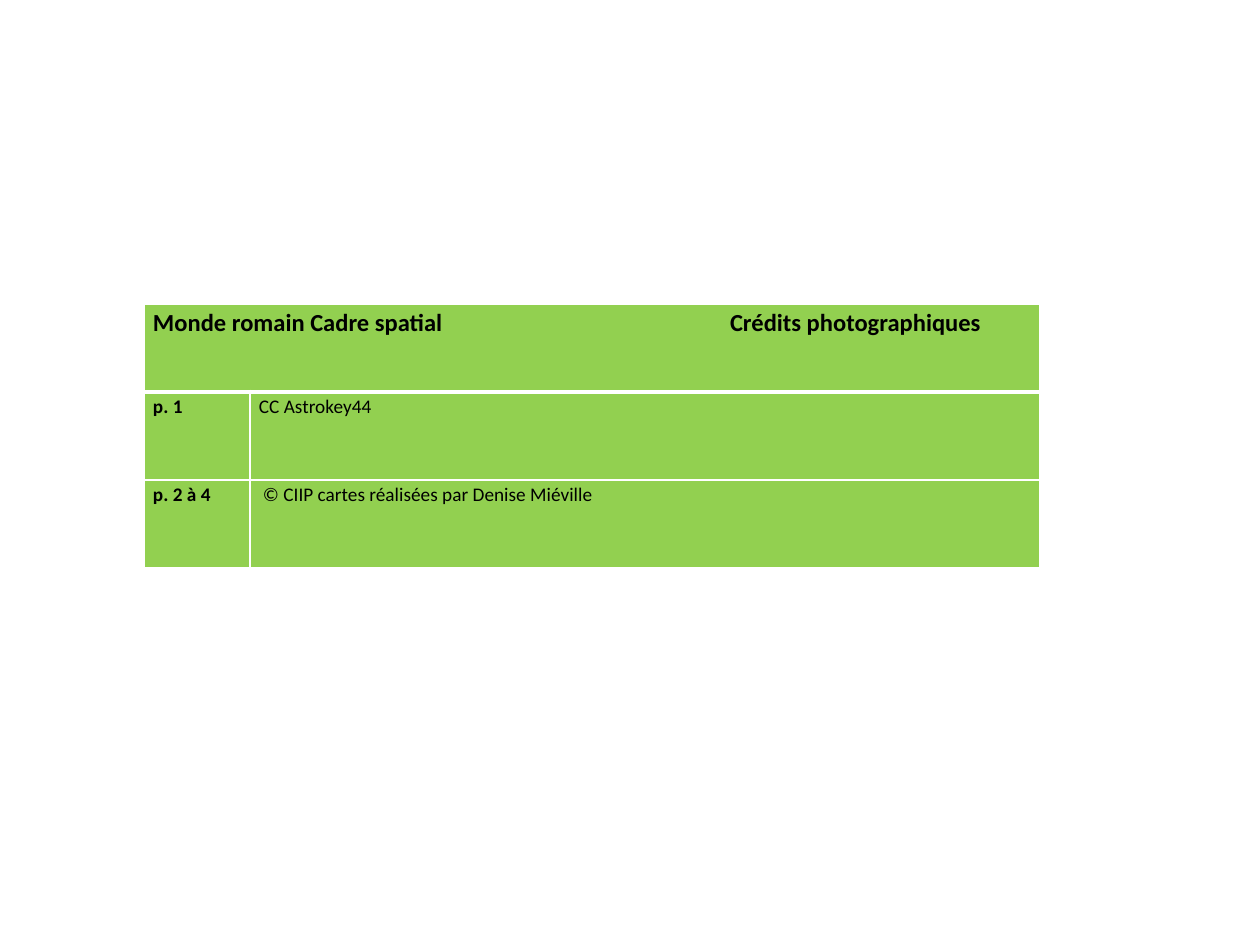
from dataclasses import dataclass

from pptx import Presentation
from pptx.dml.color import RGBColor
from pptx.oxml.ns import qn
from pptx.util import Pt
from lxml.etree import SubElement

SCALE = 914400 / 126


@dataclass(frozen=True)
class Theme:
    """Colours, font and type sizes of the slide."""
    font: str = "Calibri"
    green: str = "92D050"
    white: str = "FFFFFF"
    black: str = "000000"
    head_size: int = 14
    body_size: int = 11
    thin: int = 1
    thick: int = 3


THEME = Theme()
HEADING = "Monde romain Cadre spatial\tCrédits photographiques"
CREDITS = [
    ("p. 1", "CC Astrokey44", 0),
    ("p. 2 à 4", "© CIIP cartes réalisées par Denise Miéville", 4),
]


def px(n):
    """Turn pixels into EMU."""
    return round(n * SCALE)


def set_borders(cell, top, bottom):
    """Draw white lines on the four sides of a cell."""
    widths = {"L": THEME.thin, "R": THEME.thin, "T": top, "B": bottom}
    tcPr = cell._tc.get_or_add_tcPr()
    for side, width in widths.items():
        ln = SubElement(tcPr, qn(f"a:ln{side}"), w=str(Pt(width)))
        fill = SubElement(ln, qn("a:solidFill"))
        SubElement(fill, qn("a:srgbClr"), val=THEME.white)


def fill_cell(cell, text, size, bold, indent=0, tab=None):
    """Write and format the text of a green cell."""
    cell.fill.solid()
    cell.fill.fore_color.rgb = RGBColor.from_string(THEME.green)
    cell.margin_left = cell.margin_right = px(9)
    cell.margin_top = cell.margin_bottom = 0
    p = cell.text_frame.paragraphs[0]
    p.text = text
    p.line_spacing = 1.15
    pPr = p._p.get_or_add_pPr()
    if indent:
        pPr.set("marL", str(px(indent)))
    if tab:
        tabs = SubElement(pPr, qn("a:tabLst"))
        SubElement(tabs, qn("a:tab"), pos=str(px(tab)), algn="l")
    for r in p.runs:
        r.font.name = THEME.font
        r.font.size = Pt(size)
        r.font.bold = bold
        r.font.color.rgb = RGBColor.from_string(THEME.black)


def add_credits(s, x, y, w, h):
    """Place the credits table in its box."""
    n_rows = len(CREDITS) + 1
    table = s.shapes.add_table(n_rows, 2, px(x), px(y), px(w), px(h)).table
    page_w = 106
    table.columns[0].width = px(page_w)
    table.columns[1].width = px(w - page_w)
    for i, row in enumerate(table.rows):
        row.height = px(h / n_rows)
        for cell in row.cells:
            set_borders(cell, THEME.thick if i == 1 else THEME.thin,
                        THEME.thick if i == 0 else THEME.thin)
    head = table.cell(0, 0)
    head.merge(table.cell(0, 1))
    fill_cell(head, HEADING, THEME.head_size, True, tab=577)
    for i, (page, credit, indent) in enumerate(CREDITS, 1):
        fill_cell(table.cell(i, 0), page, THEME.body_size, True)
        fill_cell(table.cell(i, 1), credit, THEME.body_size, False, indent)


def main():
    """Build and save the slide."""
    prs = Presentation()
    prs.slide_width, prs.slide_height = px(1260), px(945)
    s = prs.slides.add_slide(prs.slide_layouts[6])
    add_credits(s, 144, 304, 896, 264)
    prs.save("out.pptx")


if __name__ == "__main__":
    main()
